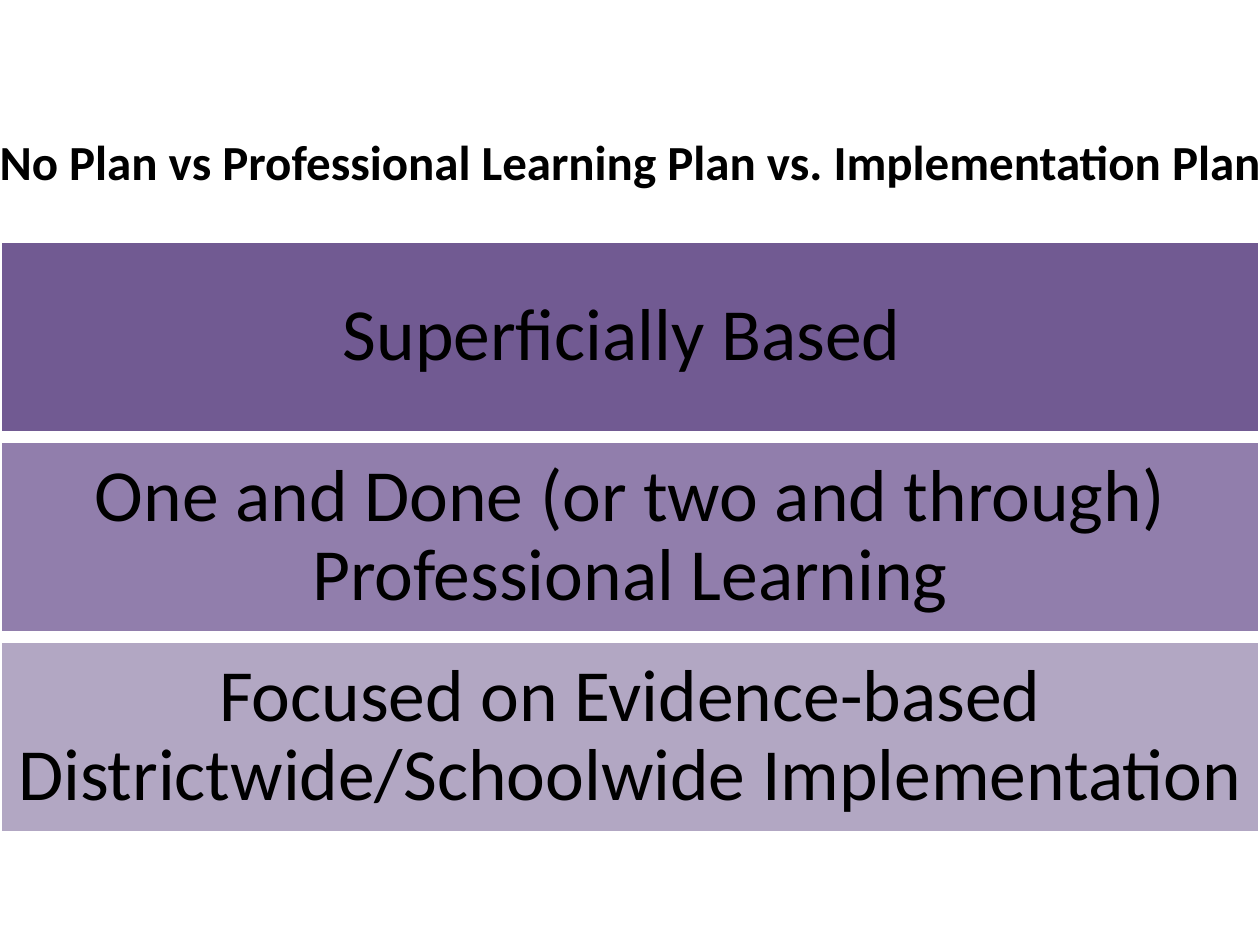
from dataclasses import dataclass

from pptx import Presentation
from pptx.dml.color import RGBColor as Rgb
from pptx.enum.shapes import MSO_SHAPE as Kind
from pptx.enum.text import MSO_ANCHOR as Anchor, PP_ALIGN as Align
from pptx.shapes.autoshape import Shape
from pptx.slide import Slide
from pptx.util import Emu, Pt

SCALE = 914400 / 126


@dataclass(frozen=True)
class Theme:
    font: str = "Calibri"
    ink: str = "000000"
    edge: str = "FFFFFF"
    rule: int = 2
    head: int = 28
    body: int = 42


@dataclass(frozen=True)
class Band:
    text: str
    fill: str


THEME = Theme()
WIDE, HIGH = 1260, 945
TOP, TALL, STEP = 241, 192, 200
TITLE = "No Plan vs Professional Learning Plan vs. Implementation Plan"
BANDS = (
    Band("Superficially Based ", "715A92"),
    Band("One and Done (or two and through) Professional Learning", "917EAC"),
    Band("Focused on Evidence-based Districtwide/Schoolwide Implementation", "B2A7C3"),
)


def px(size: int) -> Emu:
    return Emu(round(size * SCALE))


def write(shape: Shape, text: str, *, size: int, bold: bool = False,
          inset: tuple[int, int] = (15, 15), lead: float = 1.0) -> None:
    frame = shape.text_frame
    frame.word_wrap = True
    frame.vertical_anchor = Anchor.MIDDLE
    frame.margin_left = frame.margin_right = px(inset[0])
    frame.margin_top = frame.margin_bottom = px(inset[1])
    line = frame.paragraphs[0]
    line.alignment = Align.CENTER
    line.line_spacing = lead
    run = line.add_run()
    run.text = text
    run.font.name = THEME.font
    run.font.size = Pt(size)
    run.font.bold = bold
    run.font.color.rgb = Rgb.from_string(THEME.ink)


def add_title(slide: Slide) -> None:
    box = slide.shapes.add_textbox(px(-24), px(82), px(1308), px(158))
    write(box, TITLE, size=THEME.head, bold=True, inset=(13, 6))


def add_band(slide: Slide, band: Band, top: int) -> None:
    bar = slide.shapes.add_shape(Kind.RECTANGLE, 0, px(top), px(WIDE), px(TALL))
    bar.shadow.inherit = False
    bar.fill.solid()
    bar.fill.fore_color.rgb = Rgb.from_string(band.fill)
    bar.line.color.rgb = Rgb.from_string(THEME.edge)
    bar.line.width = Pt(THEME.rule)
    write(bar, band.text, size=THEME.body, lead=0.9)


def main() -> None:
    deck = Presentation()
    deck.slide_width, deck.slide_height = px(WIDE), px(HIGH)
    slide = deck.slides.add_slide(deck.slide_layouts[6])
    add_title(slide)
    for row, band in enumerate(BANDS):
        add_band(slide, band, TOP + row * STEP)
    deck.save("out.pptx")


if __name__ == "__main__":
    main()
